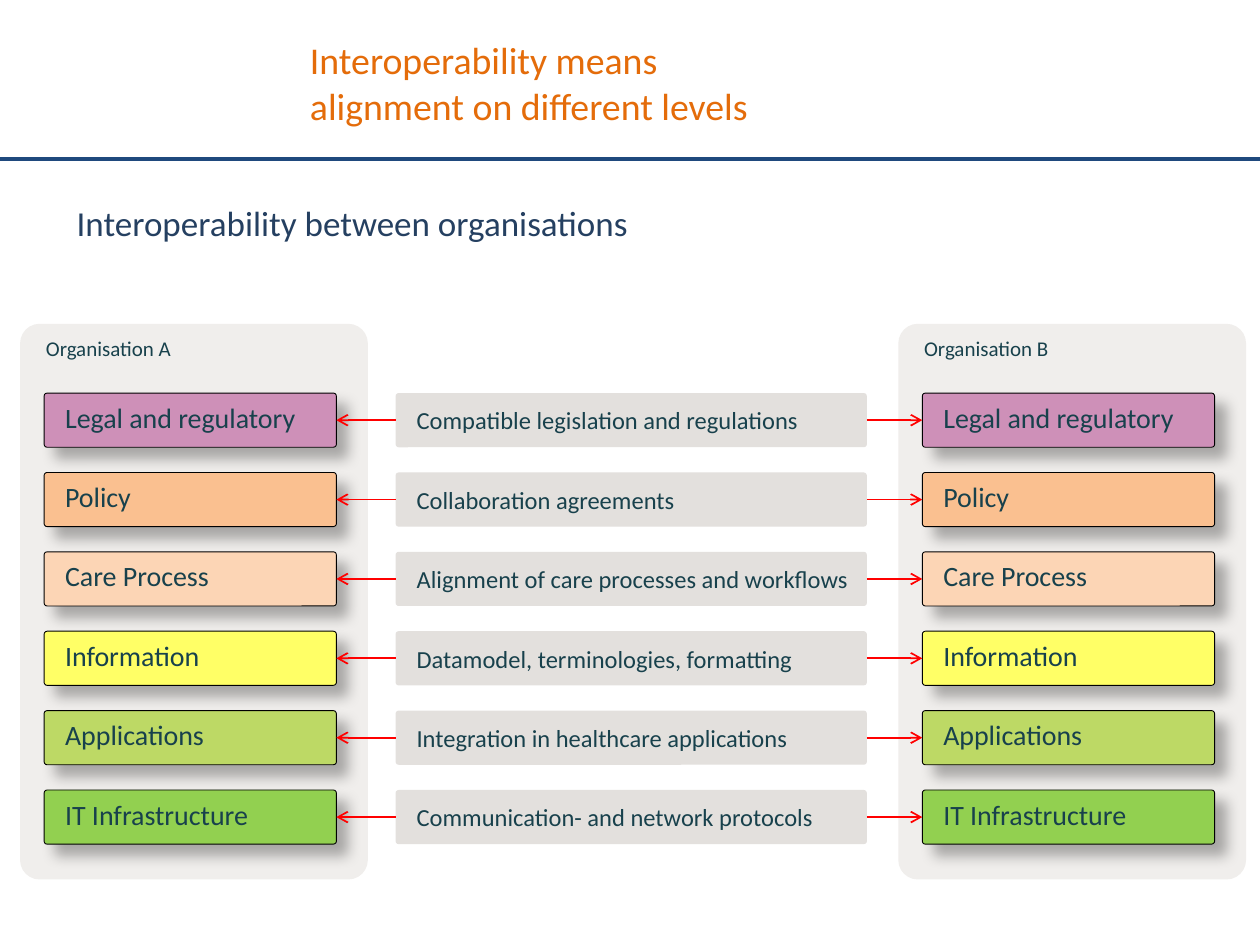
from dataclasses import dataclass

from lxml.etree import SubElement
from pptx import Presentation
from pptx.dml.color import RGBColor
from pptx.enum.shapes import MSO_CONNECTOR, MSO_SHAPE
from pptx.enum.text import MSO_ANCHOR, MSO_AUTO_SIZE, PP_ALIGN
from pptx.oxml.ns import qn
from pptx.util import Inches, Pt

FONT = "Calibri"
TEXT_COLOUR = "18414C"

# Grid in inches: two organisation panels around a column of agreements.
PANEL_TOP, PANEL_WIDTH, PANEL_HEIGHT = 2.57, 2.76, 4.41
PANEL_LEFTS = {"Organisation A": 0.16, "Organisation B": 7.13}
LEVEL_INSET, LEVEL_WIDTH = 0.19, 2.32
AGREEMENT_LEFT, AGREEMENT_WIDTH = 3.14, 3.74
FIRST_ROW, ROW_PITCH, ROW_HEIGHT = 3.12, 0.63, 0.43


@dataclass
class Level:
    name: str
    colour: str
    agreement: str


LEVELS = [
    Level("Legal and regulatory", "CE90B8", "Compatible legislation and regulations"),
    Level("Policy", "FAC090", "Collaboration agreements"),
    Level("Care Process", "FCD5B5", "Alignment of care processes and workflows"),
    Level("Information", "FFFF66", "Datamodel, terminologies, formatting"),
    Level("Applications", "BDD965", "Integration in healthcare applications"),
    Level("IT Infrastructure", "92D050", "Communication- and network protocols"),
]


def rgb(colour: str) -> RGBColor:
    return RGBColor.from_string(colour)


def format_text(paragraph, size: float, colour: str) -> None:
    paragraph.alignment = PP_ALIGN.LEFT
    for run in paragraph.runs:
        run.font.name = FONT
        run.font.size = Pt(size)
        run.font.color.rgb = rgb(colour)


def add_box(slide, left: float, top: float, width: float, height: float, text: str,
            fill: str, size: float, anchor=MSO_ANCHOR.TOP):
    """Add a borderless rounded box with left-aligned text."""
    shape = slide.shapes.add_shape(MSO_SHAPE.ROUNDED_RECTANGLE, Inches(left), Inches(top),
                                   Inches(width), Inches(height))
    shape.adjustments[0] = 0.056
    shape.shadow.inherit = False
    shape.fill.solid()
    shape.fill.fore_color.rgb = rgb(fill)
    shape.line.fill.background()
    frame = shape.text_frame
    frame.word_wrap = True
    frame.vertical_anchor = anchor
    frame.margin_left = Inches(0.16)
    frame.text = text
    format_text(frame.paragraphs[0], size, TEXT_COLOUR)
    return shape


def add_outline_and_shadow(shape) -> None:
    shape.line.color.rgb = rgb("000000")
    shape.line.width = Pt(0.5)
    effects = shape.element.spPr.find(qn("a:effectLst"))
    shadow = SubElement(effects, qn("a:outerShdw"), blurRad=str(Pt(8)), dist=str(Pt(9)),
                        dir=str(45 * 60000), algn="tl", rotWithShape="0")
    colour = SubElement(shadow, qn("a:srgbClr"), val="000000")
    SubElement(colour, qn("a:alpha"), val="30000")


def add_line(slide, start: float, end: float, y: float, colour: str, width: float,
             arrow: bool = False) -> None:
    connector = slide.shapes.add_connector(MSO_CONNECTOR.STRAIGHT, Inches(start), Inches(y),
                                           Inches(end), Inches(y))
    connector.line.color.rgb = rgb(colour)
    connector.line.width = Pt(width)
    if arrow:
        SubElement(connector.line._get_or_add_ln(), qn("a:tailEnd"), type="arrow")
    SubElement(connector.element.spPr, qn("a:effectLst"))


def add_headings(slide) -> None:
    title = slide.shapes.title
    title.left, title.top = Inches(2.36), Inches(0.26)
    title.width, title.height = Inches(5.28), Inches(0.79)
    frame = title.text_frame
    frame.auto_size = MSO_AUTO_SIZE.NONE
    frame.vertical_anchor = MSO_ANCHOR.MIDDLE
    frame.paragraphs[0].text = "Interoperability means\valignment on different levels"
    format_text(frame.paragraphs[0], 21.6, "E46C0A")

    subtitle = slide.shapes.add_textbox(Inches(0.51), Inches(1.55), Inches(6.22), Inches(0.47))
    subtitle.text_frame.word_wrap = True
    subtitle.text_frame.text = "Interoperability between organisations"
    format_text(subtitle.text_frame.paragraphs[0], 20, "254061")


def add_organisation(slide, name: str, left: float) -> None:
    add_box(slide, left, PANEL_TOP, PANEL_WIDTH, PANEL_HEIGHT, name, "F0EEEC", 12)
    for row, level in enumerate(LEVELS):
        box = add_box(slide, left + LEVEL_INSET, FIRST_ROW + row * ROW_PITCH, LEVEL_WIDTH,
                      ROW_HEIGHT, level.name, level.colour, 16)
        add_outline_and_shadow(box)


def add_agreements(slide) -> None:
    left_target = PANEL_LEFTS["Organisation A"] + LEVEL_INSET + LEVEL_WIDTH
    right_target = PANEL_LEFTS["Organisation B"] + LEVEL_INSET
    for row, level in enumerate(LEVELS):
        top = FIRST_ROW + row * ROW_PITCH
        add_box(slide, AGREEMENT_LEFT, top, AGREEMENT_WIDTH, ROW_HEIGHT, level.agreement,
                "E3E0DD", 14, MSO_ANCHOR.MIDDLE)
        middle = top + ROW_HEIGHT / 2
        add_line(slide, AGREEMENT_LEFT, left_target, middle, "FF0000", 1, arrow=True)
        add_line(slide, AGREEMENT_LEFT + AGREEMENT_WIDTH, right_target, middle, "FF0000", 1,
                 arrow=True)


def main() -> None:
    presentation = Presentation()
    presentation.slide_width, presentation.slide_height = Inches(10), Inches(7.5)
    slide = presentation.slides.add_slide(presentation.slide_layouts[5])
    add_line(slide, 0, 10, 1.26, "1F497D", 2.25)
    add_headings(slide)
    for name, left in PANEL_LEFTS.items():
        add_organisation(slide, name, left)
    add_agreements(slide)
    presentation.save("out.pptx")


if __name__ == "__main__":
    main()
